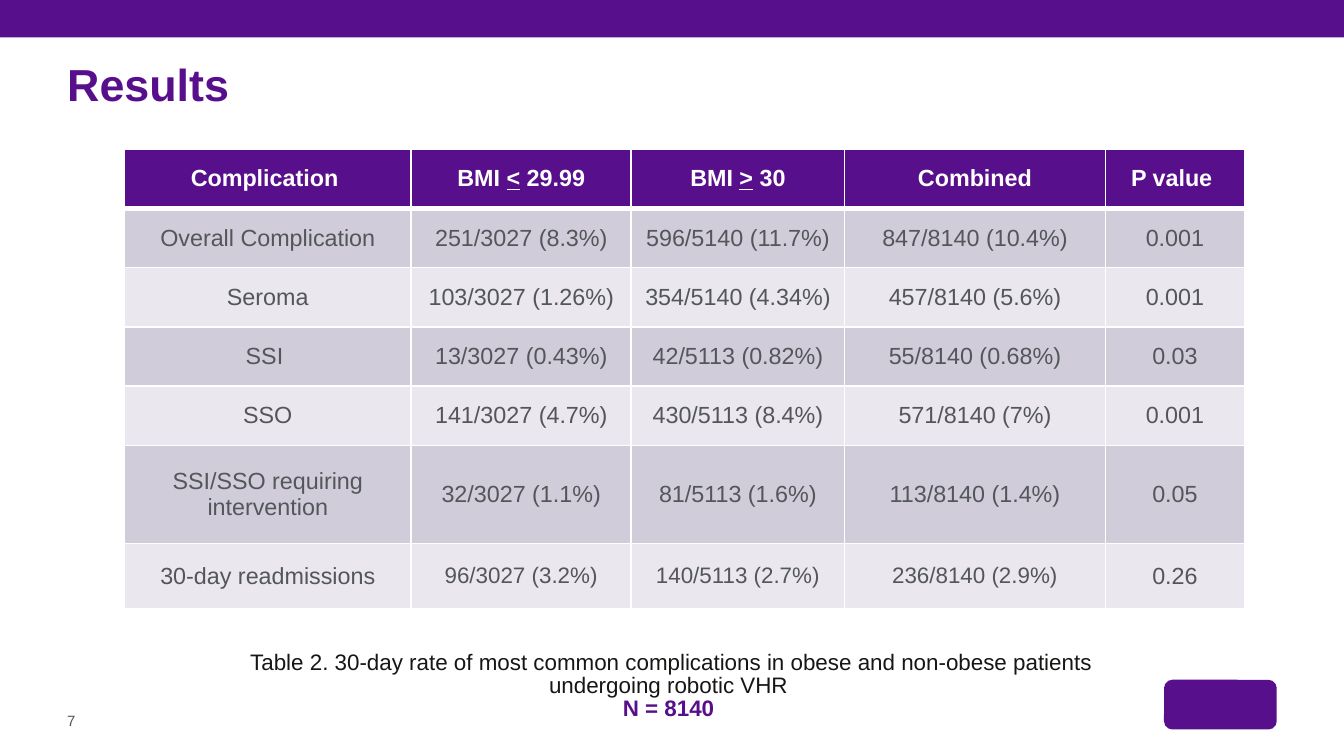
from lxml.etree import SubElement
from pptx import Presentation
from pptx.dml.color import RGBColor
from pptx.enum.shapes import MSO_SHAPE
from pptx.enum.text import MSO_ANCHOR, PP_ALIGN
from pptx.oxml.ns import qn
from pptx.util import Cm, Pt

PURPLE, WHITE, GREY, BLACK = "580F8B", "FFFFFF", "53565A", "161615"
BANDS = ("D1CCDA", "EAE7EE")

COLUMNS = [5.42, 4.16, 4.03, 4.93, 2.63]
ROWS = [1.12] * 5 + [1.85, 1.24]
HEADER = [
    [("Complication ", False)],
    [("BMI ", False), ("<", True), (" 29.99", False)],
    [("BMI ", False), (">", True), (" 30", False)],
    [("Combined", False)],
    [("P value ", False)],
]
RESULTS = [
    ["Overall Complication", "251/3027 (8.3%)", "596/5140 (11.7%)", "847/8140 (10.4%)", "0.001"],
    ["Seroma", "103/3027 (1.26%)", "354/5140 (4.34%)", "457/8140 (5.6%)", "0.001"],
    ["SSI ", "13/3027 (0.43%)", "42/5113 (0.82%)", "55/8140 (0.68%)", "0.03"],
    ["SSO", "141/3027 (4.7%)", "430/5113 (8.4%)", "571/8140 (7%)", "0.001"],
    ["SSI/SSO requiring intervention", "32/3027 (1.1%)", "81/5113 (1.6%)", "113/8140 (1.4%)", "0.05"],
    ["30-day readmissions", "96/3027 (3.2%)", "140/5113 (2.7%)", "236/8140 (2.9%)", "0.26"],
]


def rgb(color):
    return RGBColor.from_string(color)


class Deck:
    font = "Arial"

    def __init__(self, width, height):
        self.prs = Presentation()
        self.prs.slide_width, self.prs.slide_height = Cm(width), Cm(height)
        self.s = None

    def add_slide(self):
        self.s = self.prs.slides.add_slide(self.prs.slide_layouts[5])

    def run(self, p, text, size, color, bold=False, underline=False):
        r = p.add_run()
        r.text = text
        f = r.font
        f.name, f.size, f.bold, f.underline = self.font, Pt(size), bold, underline
        f.color.rgb = rgb(color)

    def frame(self, sp, anchor, line_spacing=None, align=PP_ALIGN.LEFT):
        """Style the text frame and return its first paragraph."""
        tf = sp.text_frame
        tf.word_wrap, tf.vertical_anchor = True, anchor
        tf.margin_left = tf.margin_top = tf.margin_right = tf.margin_bottom = 0
        p = tf.paragraphs[0]
        p.alignment, p.line_spacing = align, line_spacing
        return p

    def title(self, text, x, y, w, h):
        sp = self.s.shapes.title
        sp.left, sp.top, sp.width, sp.height = Cm(x), Cm(y), Cm(w), Cm(h)
        self.run(self.frame(sp, MSO_ANCHOR.BOTTOM, 0.85), text, 24, PURPLE, bold=True)

    def text(self, x, y, w, h, anchor, **style):
        sp = self.s.shapes.add_textbox(Cm(x), Cm(y), Cm(w), Cm(h))
        return self.frame(sp, anchor, **style)

    def block(self, shape, x, y, w, h):
        sp = self.s.shapes.add_shape(shape, Cm(x), Cm(y), Cm(w), Cm(h))
        sp.shadow.inherit = False
        sp.fill.solid()
        sp.fill.fore_color.rgb = rgb(PURPLE)
        sp.line.fill.background()

    def table(self, x, y, columns, rows):
        table = self.s.shapes.add_table(
            len(rows), len(columns), Cm(x), Cm(y), Cm(sum(columns)), Cm(sum(rows))
        ).table
        for column, width in zip(table.columns, columns):
            column.width = Cm(width)
        for row, height in zip(table.rows, rows):
            row.height = Cm(height)
        return table

    def cell(self, cell, fill, top=1, bottom=1):
        """Style a cell with white borders and return its paragraph."""
        cell.margin_left = cell.margin_top = cell.margin_right = cell.margin_bottom = 0
        cell.vertical_anchor = MSO_ANCHOR.MIDDLE
        tc_pr = cell._tc.get_or_add_tcPr()
        for side, width in (("L", 1), ("R", 1), ("T", top), ("B", bottom)):
            ln = SubElement(tc_pr, qn(f"a:ln{side}"), w=str(Pt(width)))
            SubElement(SubElement(ln, qn("a:solidFill")), qn("a:srgbClr"), val=WHITE)
        cell.fill.solid()
        cell.fill.fore_color.rgb = rgb(fill)
        p = cell.text_frame.paragraphs[0]
        p.alignment = PP_ALIGN.CENTER
        return p


def main():
    deck = Deck(25.4, 14.29)
    deck.add_slide()
    deck.block(MSO_SHAPE.RECTANGLE, 0, 0, 25.4, 0.71)
    deck.block(MSO_SHAPE.ROUNDED_RECTANGLE, 22, 12.85, 2.13, 0.94)
    deck.title("Results", 1.27, 1.24, 22.86, 0.86)

    table = deck.table(2.35, 2.82, COLUMNS, ROWS)
    for j, parts in enumerate(HEADER):
        p = deck.cell(table.cell(0, j), PURPLE, bottom=3)
        for text, underline in parts:
            deck.run(p, text, 12.5, WHITE, bold=True, underline=underline)
    for i, values in enumerate(RESULTS):
        last = i == len(RESULTS) - 1
        for j, value in enumerate(values):
            p = deck.cell(table.cell(i + 1, j), BANDS[i % 2], top=3 if i == 0 else 1)
            deck.run(p, value, 12 if last and 1 <= j <= 3 else 12.5, GREY)

    p = deck.text(1.27, 13.46, 0.71, 0.33, MSO_ANCHOR.MIDDLE)
    deck.run(p, "7", 8, GREY)

    p = deck.text(4.72, 12.3, 15.95, 1.33, MSO_ANCHOR.BOTTOM,
                  line_spacing=0.85, align=PP_ALIGN.CENTER)
    deck.run(p, "Table 2. 30-day rate of most common complications in obese "
                "and non-obese patients undergoing robotic VHR ", 12, BLACK)
    p.add_line_break()
    deck.run(p, "N = 8140 ", 12, PURPLE, bold=True)

    deck.prs.save("out.pptx")


if __name__ == "__main__":
    main()
